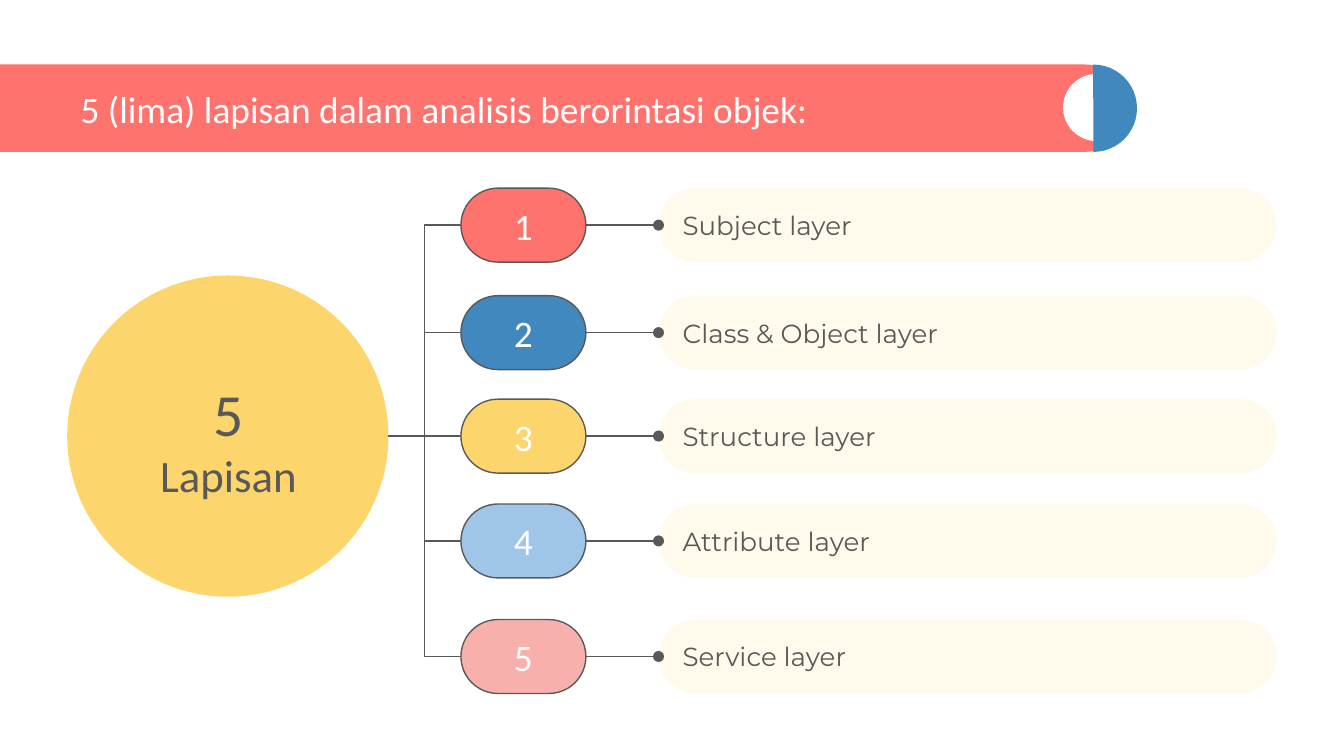
from lxml import etree
from pptx import Presentation
from pptx import util as u
from pptx.dml.color import RGBColor
from pptx.enum import shapes, text
from pptx.oxml.ns import qn

CORAL = RGBColor(0xFF, 0x73, 0x6E)
BLUE = RGBColor(0x40, 0x88, 0xBE)
YELLOW = RGBColor(0xFC, 0xD6, 0x6C)
SKY = RGBColor(0x9F, 0xC5, 0xE8)
PINK = RGBColor(0xF8, 0xB0, 0xAD)
CREAM = RGBColor(0xFF, 0xFA, 0xEB)
GREY = RGBColor(0x59, 0x59, 0x59)
WHITE = RGBColor(0xFF, 0xFF, 0xFF)

TITLE = "5 (lima) lapisan dalam analisis berorintasi objek:"
HUB = [("5", 32), ("Lapisan", 24)]
LAYERS = [  # label, pill colour, top of the row
    ("Subject layer", CORAL, 1.4),
    ("Class & Object layer", BLUE, 2.2),
    ("Structure layer", YELLOW, 2.97),
    ("Attribute layer", SKY, 3.75),
    ("Service layer", PINK, 4.61),
]

SLIDE_WIDTH = 10
SLIDE_HEIGHT = SLIDE_WIDTH * 9 / 16
PILL_LEFT, PILL_WIDTH = 3.43, 0.93
BAR_LEFT, BAR_WIDTH = 4.9, 4.6
ROW_HEIGHT = 0.55
HUB_LEFT, HUB_TOP, HUB_SIZE = 0.5, 2.05, 2.39
BANNER_TOP, BANNER_HEIGHT = 0.48, 0.65

SHAPE = shapes.MSO_SHAPE
LEFT, CENTER = text.PP_ALIGN.LEFT, text.PP_ALIGN.CENTER
MIDDLE, TOP = text.MSO_ANCHOR.MIDDLE, text.MSO_ANCHOR.TOP


def inches(*lengths):
    return [u.Inches(length) for length in lengths]


def add_shape(slide, kind, box, fill, adjustments=(), outlined=False):
    shape = slide.shapes.add_shape(kind, *inches(*box))
    shape.shadow.inherit = False
    shape.fill.solid()
    shape.fill.fore_color.rgb = fill
    for index, value in enumerate(adjustments):
        shape.adjustments[index] = value
    if outlined:
        shape.line.color.rgb = GREY
        shape.line.width = u.Pt(0.75)
    else:
        shape.line.fill.background()
    return shape


def write(shape, lines, font, color, align, anchor=MIDDLE):
    """Fill the shape with (wording, size) lines, one paragraph each."""
    frame = shape.text_frame
    frame.word_wrap = True
    frame.auto_size = text.MSO_AUTO_SIZE.NONE
    frame.vertical_anchor = anchor
    frame.margin_left = frame.margin_right = u.Inches(0.1)
    frame.margin_top = frame.margin_bottom = u.Inches(0.1)
    for index, (wording, size) in enumerate(lines):
        para = frame.add_paragraph() if index else frame.paragraphs[0]
        para.text = wording
        para.alignment = align
        para.font.name = font
        para.font.size = u.Pt(size)
        para.font.color.rgb = color


def add_elbow(slide, start, end):
    elbow = slide.shapes.add_connector(
        shapes.MSO_CONNECTOR.ELBOW, *inches(*start, *end))
    elbow.line.color.rgb = GREY
    elbow.line.width = u.Pt(0.75)
    etree.SubElement(elbow.element.spPr, qn("a:effectLst"))
    return elbow


def add_banner(slide):
    add_shape(slide, SHAPE.ROUNDED_RECTANGLE,
              (-0.32, BANNER_TOP, 8.72, BANNER_HEIGHT), CORAL, [0.5])
    add_shape(slide, SHAPE.OVAL, (7.91, 0.55, 0.5, 0.5), WHITE)
    half_disc = add_shape(slide, SHAPE.PIE,
                          (7.81, BANNER_TOP, BANNER_HEIGHT, BANNER_HEIGHT),
                          BLUE, [53.67, 162])
    half_disc.rotation = 180

    title = slide.shapes.title
    title.left, title.top, title.width, title.height = inches(0.5, 0.6, 7.25, 0.41)
    write(title, [(TITLE, 20)], "Calibri", WHITE, LEFT)
    title.element.getparent().append(title.element)  # in front of the banner


def add_hub(slide):
    add_shape(slide, SHAPE.OVAL, (HUB_LEFT, HUB_TOP, HUB_SIZE, HUB_SIZE), YELLOW)
    label = slide.shapes.add_textbox(*inches(0.73, 2.7, 1.94, 1.05))
    write(label, HUB, "Calibri", GREY, CENTER, TOP)


def add_layer(slide, number, label, color, top):
    bar = add_shape(slide, SHAPE.ROUNDED_RECTANGLE,
                    (BAR_LEFT, top, BAR_WIDTH, ROW_HEIGHT), CREAM, [0.5])
    write(bar, [(label, 14)], "Montserrat", GREY, LEFT)
    pill = add_shape(slide, SHAPE.ROUNDED_RECTANGLE,
                     (PILL_LEFT, top, PILL_WIDTH, ROW_HEIGHT), color, [0.5], True)
    write(pill, [(str(number), 20)], "Calibri", WHITE, CENTER)

    middle = top + ROW_HEIGHT / 2
    branch = add_elbow(slide, (HUB_LEFT + HUB_SIZE, HUB_TOP + HUB_SIZE / 2),
                       (PILL_LEFT, middle))
    branch.end_connect(pill, 1)
    link = add_elbow(slide, (PILL_LEFT + PILL_WIDTH, middle), (BAR_LEFT, middle))
    link.begin_connect(pill, 3)
    link.end_connect(bar, 1)
    outline = link.element.spPr.find(qn("a:ln"))
    etree.SubElement(outline, qn("a:tailEnd"), type="oval")


def main():
    deck = Presentation()
    deck.slide_width, deck.slide_height = inches(SLIDE_WIDTH, SLIDE_HEIGHT)
    slide = deck.slides.add_slide(deck.slide_layouts[5])
    add_banner(slide)
    add_hub(slide)
    for number, layer in enumerate(LAYERS, 1):
        add_layer(slide, number, *layer)
    deck.save("out.pptx")


if __name__ == "__main__":
    main()
